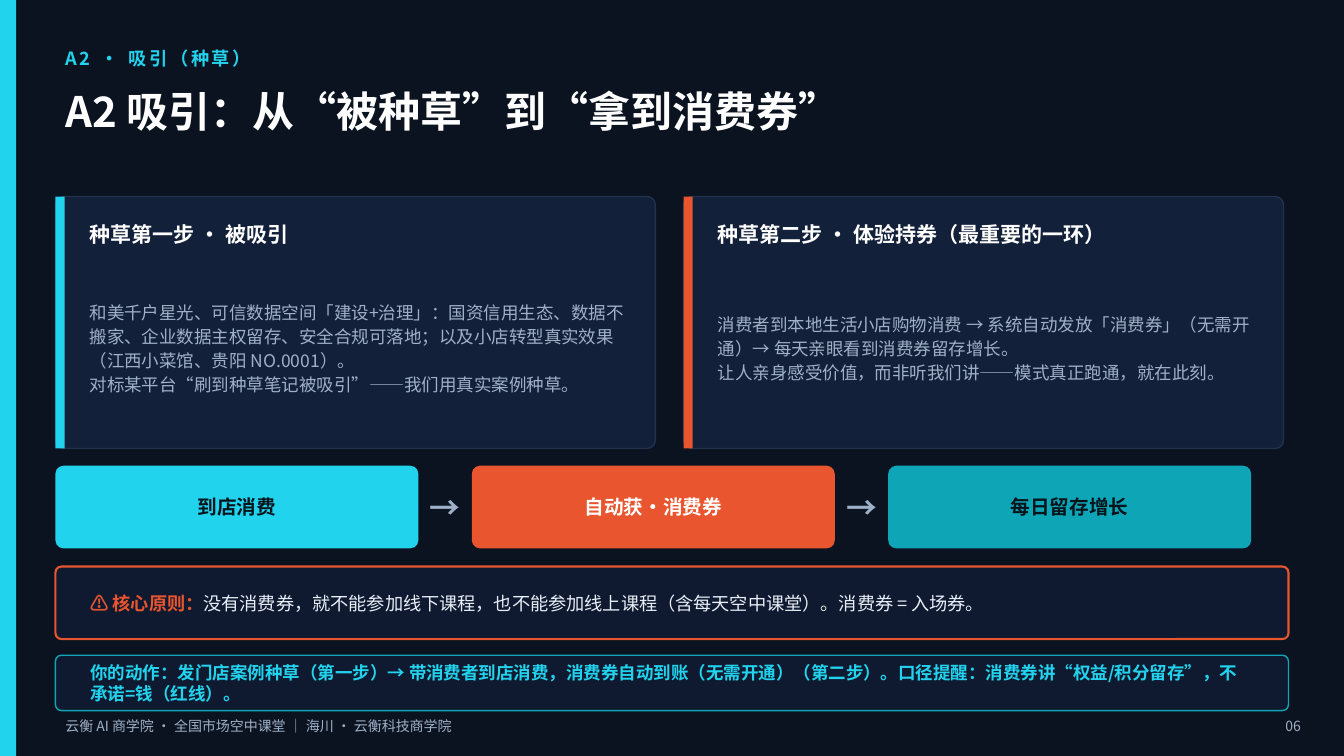
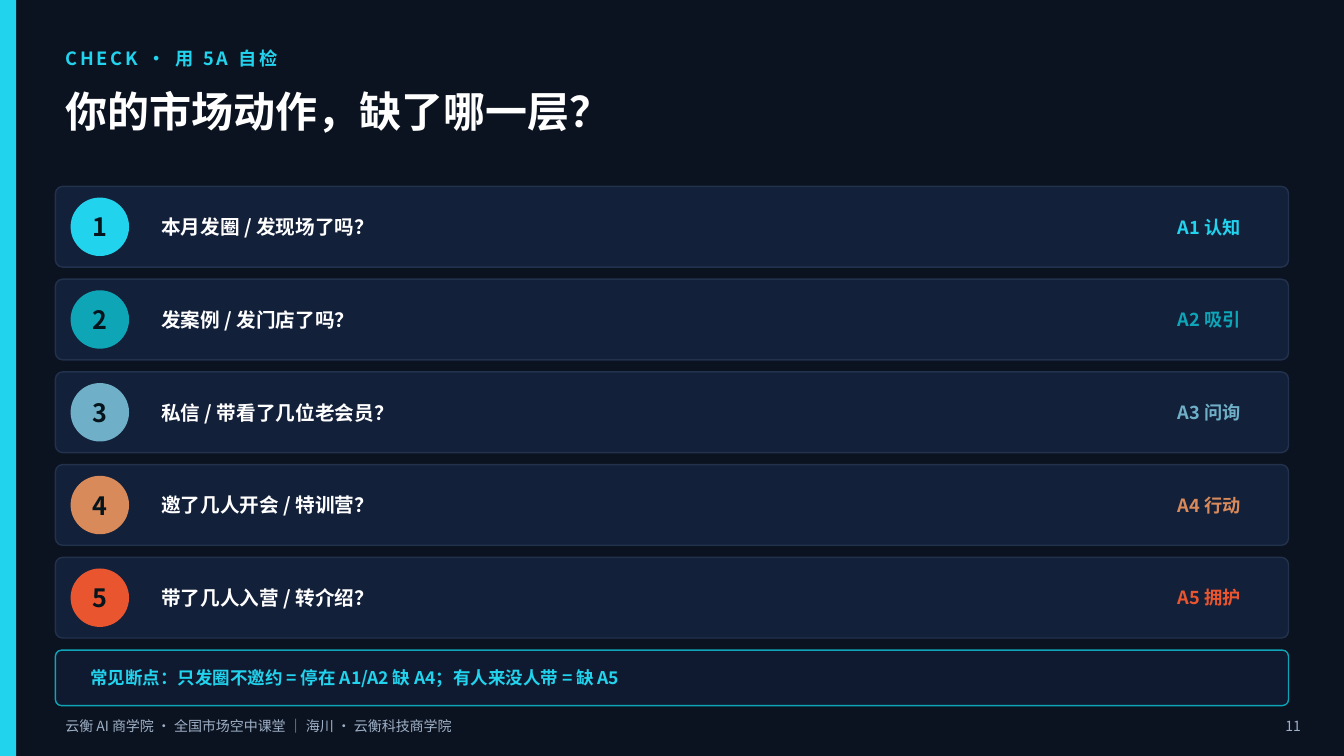
from collections import namedtuple
from lxml import etree
from pptx import Presentation
from pptx.dml.color import RGBColor
from pptx.enum.shapes import MSO_SHAPE
from pptx.enum.text import MSO_ANCHOR, PP_ALIGN
from pptx.oxml.ns import qn
from pptx.util import Pt

PX = 9144
FONT = "Noto Sans CJK SC"
COLORS = {
    "page": "0B1220",
    "card": "13203A",
    "card_edge": "22324D",
    "callout": "0F1A30",
    "cyan": "22D3EE",
    "teal": "0EA5B7",
    "sky": "6FB0C8",
    "sand": "D98A5A",
    "orange": "E8552E",
    "white": "FFFFFF",
    "ink": "06141C",
    "muted": "9FB1C7",
    "light": "E8EEF7",
}
FOOTER = "云衡 AI 商学院 · 全国市场空中课堂 ｜ 海川 · 云衡科技商学院"
LEFT, FULL_WIDTH = 55, 1223

Box = namedtuple("Box", "left top width height")
Span = namedtuple("Span", "text size color bold", defaults=(False,))


def color(name):
    return RGBColor.from_string(COLORS[name])


def emu(box):
    return [length * PX for length in box]


def write(shape, paras, align=PP_ALIGN.LEFT, margins=(10, 10), spacing=None, tracking=None):
    frame = shape.text_frame
    frame.word_wrap = True
    frame.vertical_anchor = MSO_ANCHOR.MIDDLE
    frame.margin_left, frame.margin_right = (margin * PX for margin in margins)
    frame.margin_top = frame.margin_bottom = 5 * PX
    for index, spans in enumerate(paras):
        para = frame.add_paragraph() if index else frame.paragraphs[0]
        para.alignment = align
        if spacing:
            para.line_spacing = spacing
        for span in spans:
            run = para.add_run()
            run.text = span.text
            run.font.size = Pt(span.size)
            run.font.bold = span.bold
            run.font.color.rgb = color(span.color)
            run.font.name = FONT
            properties = run.font._element
            etree.SubElement(properties, qn("a:ea"), typeface=FONT)
            if tracking:
                properties.set("spc", str(tracking * 100))


def add_text(page, box, paras, **style):
    write(page.shapes.add_textbox(*emu(box)), paras, **style)


def add_panel(page, kind, box, fill, edge=None, edge_width=1, radius=None):
    panel = page.shapes.add_shape(kind, *emu(box))
    panel.shadow.inherit = False
    panel.fill.solid()
    panel.fill.fore_color.rgb = color(fill)
    if edge:
        panel.line.color.rgb = color(edge)
        panel.line.width = Pt(edge_width)
    else:
        panel.line.fill.background()
    if radius:
        panel.adjustments[0] = radius / min(box.width, box.height)
    return panel


def add_page(deck, kicker, title, number):
    page = deck.slides.add_slide(deck.slide_layouts[6])
    page.background.fill.solid()
    page.background.fill.fore_color.rgb = color("page")
    add_panel(page, MSO_SHAPE.RECTANGLE, Box(0, 0, 16, 750), "cyan")
    add_text(page, Box(LEFT, 42, 1100, 32), [[Span(kicker, 13, "cyan", True)]], tracking=2)
    add_text(page, Box(LEFT, 74, 1220, 72), [[Span(title, 30, "white", True)]])
    add_text(page, Box(LEFT, 705, 900, 30), [[Span(FOOTER, 10, "muted")]])
    add_text(page, Box(1240, 705, 60, 30), [[Span(number, 10, "muted")]], align=PP_ALIGN.RIGHT)
    return page


def add_card(page, box, accent, heading, lines):
    left, top, width, height = box
    add_panel(page, MSO_SHAPE.ROUNDED_RECTANGLE, box, "card", "card_edge", radius=8)
    add_panel(page, MSO_SHAPE.RECTANGLE, Box(left, top, 9, height), accent)
    add_text(page, Box(left + 24, top + 16, width - 40, 42), [[Span(heading, 15, "white", True)]])
    add_text(page, Box(left + 24, top + 60, width - 45, height - 72),
             [[Span(line, 12.5, "muted")] for line in lines], spacing=1.14)


def add_flow(page, box, steps, gap):
    width = (box.width - gap * (len(steps) - 1)) // len(steps)
    for index, (label, fill, ink) in enumerate(steps):
        left = box.left + index * (width + gap)
        if index:
            add_text(page, Box(left - gap, box.top, gap, box.height),
                     [[Span("→", 22, "muted", True)]], align=PP_ALIGN.CENTER)
        step = add_panel(page, MSO_SHAPE.ROUNDED_RECTANGLE,
                         Box(left, box.top, width, box.height), fill, radius=8)
        write(step, [[Span(label, 14, ink, True)]], align=PP_ALIGN.CENTER)


def add_callout(page, box, spans, edge="teal", edge_width=1):
    callout = add_panel(page, MSO_SHAPE.ROUNDED_RECTANGLE, box, "callout", edge, edge_width, 6)
    write(callout, [spans], margins=(33, 36))


def add_check(page, box, number, question, layer, accent):
    left, top, width, height = box
    add_panel(page, MSO_SHAPE.ROUNDED_RECTANGLE, box, "card", "card_edge", radius=7)
    badge = add_panel(page, MSO_SHAPE.OVAL, Box(left + 15, top + 11, 58, 58), accent)
    write(badge, [[Span(str(number), 18, "ink", True)]], align=PP_ALIGN.CENTER, margins=(0, 0))
    add_text(page, Box(left + 95, top + 10, 650, height - 20),
             [[Span(question, 14, "white", True)]])
    add_text(page, Box(left + width - 458, top + 10, 420, height - 20),
             [[Span(layer, 13, accent, True)]], align=PP_ALIGN.RIGHT)


def build_attract(deck):
    page = add_page(deck, "A2 · 吸引（种草）", "A2 吸引：从“被种草”到“拿到消费券”", "06")
    cards = [
        ("cyan", "种草第一步 · 被吸引", [
            "和美千户星光、可信数据空间「建设+治理」：国资信用生态、数据不搬家、企业数据主权留存、"
            "安全合规可落地；以及小店转型真实效果（江西小菜馆、贵阳 NO.0001）。",
            "对标某平台“刷到种草笔记被吸引”——我们用真实案例种草。",
        ]),
        ("orange", "种草第二步 · 体验持券（最重要的一环）", [
            "消费者到本地生活小店购物消费 → 系统自动发放「消费券」（无需开通）→ 每天亲眼看到消费券留存增长。",
            "让人亲身感受价值，而非听我们讲——模式真正跑通，就在此刻。",
        ]),
    ]
    for index, card in enumerate(cards):
        add_card(page, Box(LEFT + index * 623, 195, 595, 250), *card)
    add_flow(page, Box(LEFT, 462, 1186, 82), [
        ("到店消费", "cyan", "ink"),
        ("自动获·消费券", "orange", "white"),
        ("每日留存增长", "teal", "ink"),
    ], gap=53)
    add_callout(page, Box(LEFT, 562, FULL_WIDTH, 72), [
        Span("⚠ 核心原则：", 13, "orange", True),
        Span("没有消费券，就不能参加线下课程，也不能参加线上课程（含每天空中课堂）。消费券 = 入场券。",
             13, "light"),
    ], "orange", 1.5)
    add_callout(page, Box(LEFT, 650, FULL_WIDTH, 55), [
        Span("你的动作：发门店案例种草（第一步）→ 带消费者到店消费，消费券自动到账（无需开通）（第二步）。"
             "口径提醒：消费券讲“权益/积分留存”，不承诺=钱（红线）。", 12.5, "cyan", True),
    ])


def build_checklist(deck):
    page = add_page(deck, "CHECK · 用 5A 自检", "你的市场动作，缺了哪一层？", "11")
    checks = [
        ("本月发圈 / 发现场了吗？", "A1 认知", "cyan"),
        ("发案例 / 发门店了吗？", "A2 吸引", "teal"),
        ("私信 / 带看了几位老会员？", "A3 问询", "sky"),
        ("邀了几人开会 / 特训营？", "A4 行动", "sand"),
        ("带了几人入营 / 转介绍？", "A5 拥护", "orange"),
    ]
    for index, check in enumerate(checks):
        add_check(page, Box(LEFT, 185 + index * 92, FULL_WIDTH, 80), index + 1, *check)
    add_callout(page, Box(LEFT, 645, FULL_WIDTH, 55), [
        Span("常见断点：只发圈不邀约 = 停在 A1/A2 缺 A4；有人来没人带 = 缺 A5", 12.5, "cyan", True),
    ])


def main():
    deck = Presentation()
    deck.slide_width, deck.slide_height = 1333 * PX, 750 * PX
    build_attract(deck)
    build_checklist(deck)
    deck.save("out.pptx")


if __name__ == "__main__":
    main()
